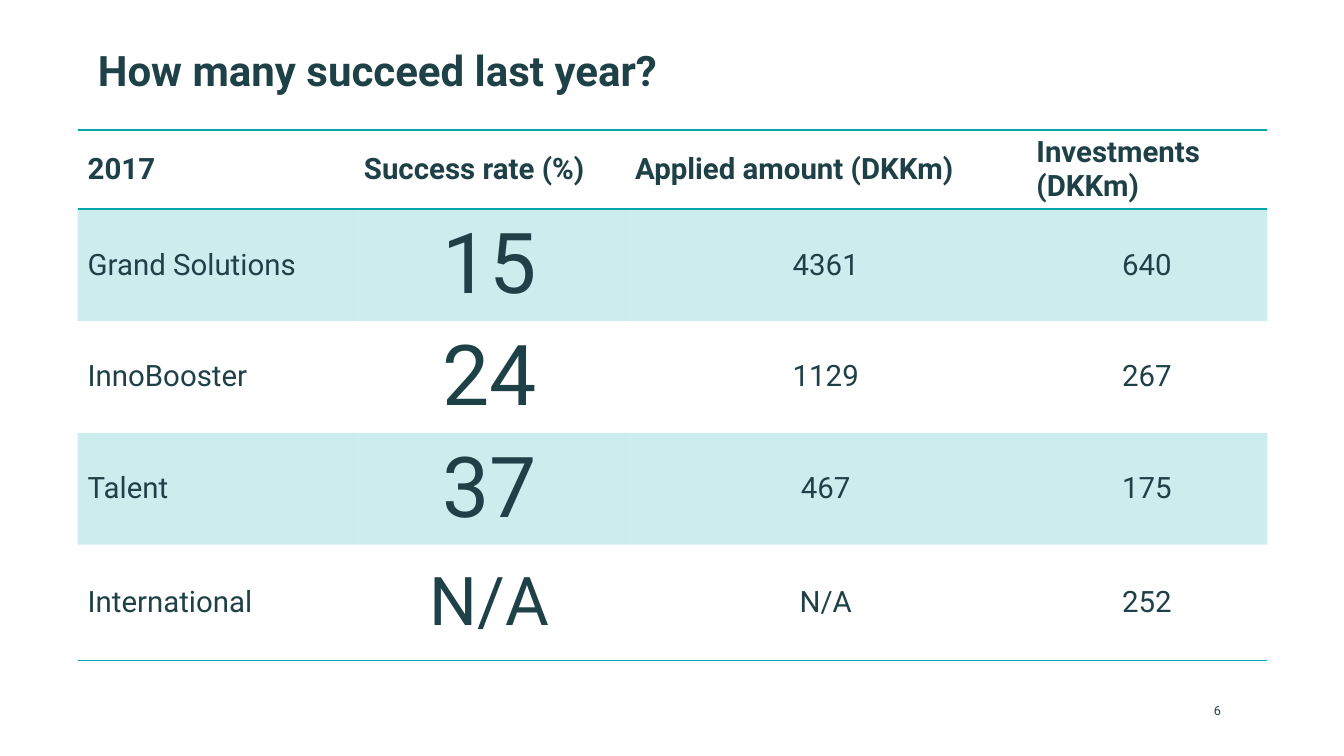
from lxml import etree
from pptx import Presentation
from pptx.dml.color import RGBColor
from pptx.enum.text import MSO_ANCHOR as Anchor, MSO_AUTO_SIZE as Auto, PP_ALIGN as Align
from pptx.oxml import parse_xml
from pptx.oxml.ns import nsdecls, qn
from pptx.util import Inches, Pt

HUES = {"ink": "1E4148", "teal": "00A6AA"}
FONT = "Roboto"
PLAIN = "{2D5ABB26-0587-4C30-8999-92F81FD0307C}"
COLS = [2.74, 2.69, 3.98, 2.39]
TALL = [0.71, 1.11, 1.11, 1.11, 1.15]
ROWS = [
    ["2017", "Success rate (%)", "Applied amount (DKKm)", "Investments (DKKm)"],
    ["Grand Solutions", "15", "4361", "640"],
    ["InnoBooster", "24", "1129", "267"],
    ["Talent", "37", "467", "175"],
    ["International", "N/A", "N/A", "252"],
]


def write(frame, text, size=21, bold=False, align=Align.LEFT, anchor=Anchor.MIDDLE):
    frame.word_wrap = True
    frame.vertical_anchor = anchor
    para = frame.paragraphs[0]
    para.alignment = align
    run = para.add_run()
    run.text = text
    font = run.font
    font.name, font.size, font.bold = FONT, Pt(size), bold
    font.color.rgb = RGBColor.from_string(HUES["ink"])


def place(shape, box):
    shape.left, shape.top, shape.width, shape.height = map(Inches, box)


def tint(cell):
    cell.fill.solid()
    cell.fill.fore_color.rgb = RGBColor.from_string(HUES["teal"])
    hue = cell._tc.tcPr.find(".//" + qn("a:srgbClr"))
    etree.SubElement(hue, qn("a:alpha"), val="20000")


def rule(cell, sides):
    props = cell._tc.get_or_add_tcPr()
    for spot, side in enumerate(sides):
        props.insert(spot, parse_xml(
            f'<a:ln{side} {nsdecls("a")} w="{Pt(1)}"><a:solidFill>'
            f'<a:srgbClr val="{HUES["teal"]}"/></a:solidFill></a:ln{side}>'))


def add_title(slide, box):
    title = slide.shapes.title
    place(title, box)
    frame = title.text_frame
    frame.auto_size = Auto.NONE
    write(frame, "How many succeed last year?", size=30, bold=True, anchor=Anchor.TOP)


def add_rates(slide, box):
    frame = slide.shapes.add_table(len(ROWS), len(COLS), *map(Inches, box))
    table = frame.table
    table.horz_banding = False
    table._tbl.tblPr.find(qn("a:tableStyleId")).text = PLAIN
    for col, wide in zip(table.columns, COLS):
        col.width = Inches(wide)
    for row, high in zip(table.rows, TALL):
        row.height = Inches(high)
    for r, row in enumerate(ROWS):
        for c, text in enumerate(row):
            cell = table.cell(r, c)
            size = 21
            if r and c == 1:
                size = 60 if text.isdigit() else 48
            align = Align.CENTER if r and c else Align.LEFT
            write(cell.text_frame, text, size=size, bold=r == 0, align=align)
            cell.vertical_anchor = Anchor.MIDDLE
            if r % 2:
                tint(cell)
            else:
                cell.fill.background()
            if r == 0:
                rule(cell, "TB")
            elif r == len(ROWS) - 1:
                rule(cell, "B")


def add_page(slide, box):
    frame = slide.shapes.add_textbox(*map(Inches, box)).text_frame
    frame.margin_left = frame.margin_right = frame.margin_top = frame.margin_bottom = 0
    write(frame, "6", size=9)


def main():
    deck = Presentation()
    deck.slide_width, deck.slide_height = Inches(13.33), Inches(7.5)
    slide = deck.slides.add_slide(deck.slide_layouts[5])
    add_rates(slide, (0.77, 1.29, sum(COLS), sum(TALL)))
    add_page(slide, (12.04, 6.85, 0.43, 0.4))
    add_title(slide, (0.87, 0.39, 11.61, 0.51))
    deck.save("out.pptx")


if __name__ == "__main__":
    main()
